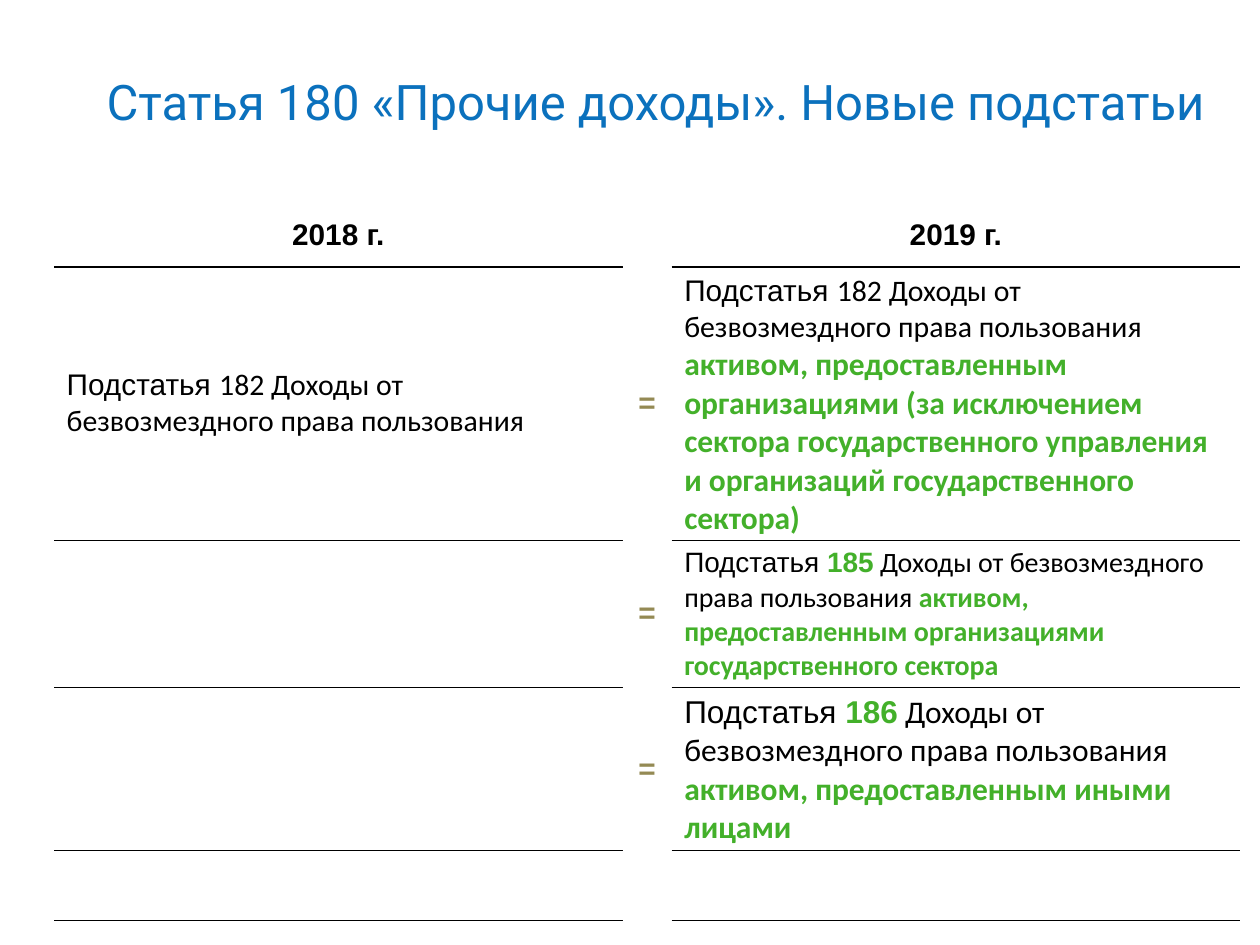
from lxml import etree
from pptx import Presentation
from pptx import util as u
from pptx.dml.color import RGBColor
from pptx.enum import text
from pptx.oxml import ns

BLACK = RGBColor(0x00, 0x00, 0x00)
WHITE = RGBColor(0xFF, 0xFF, 0xFF)
BLUE = RGBColor(0x0B, 0x71, 0xBD)
GREEN = RGBColor(0x43, 0xB0, 0x2A)
OLIVE = RGBColor(0x94, 0x8A, 0x54)

COLUMN_WIDTHS = (11.46, 0.99, 11.46)
ROW_HEIGHTS = (1.27, 5.49, 2.92, 3.28, 1.4)
THIN, THICK = 0.5, 1.5


def run_format(size, name="Arial", color=BLACK, bold=False):
    return {"size": u.Pt(size), "name": name, "color": color, "bold": bold}


def add_runs(paragraph, runs):
    for content, values in runs:
        run = paragraph.add_run()
        run.text = content
        for key, value in values.items():
            if key == "color":
                run.font.color.rgb = value
            else:
                setattr(run.font, key, value)


def add_title(slide, content):
    box = slide.shapes.add_textbox(u.Cm(1.9), u.Cm(1.32), u.Cm(24), u.Cm(1.45))
    box.text_frame.word_wrap = True
    add_runs(box.text_frame.paragraphs[0], [(content, run_format(28, "Roboto", BLUE))])


def set_borders(cell, borders):
    """Draw the sides given as (width, color); the others get no line."""
    properties = cell._tc.get_or_add_tcPr()
    for index, side in enumerate(("lnL", "lnR", "lnT", "lnB")):
        line = etree.Element(ns.qn(f"a:{side}"))
        if side in borders:
            width, color = borders[side]
            line.set("w", str(u.Pt(width)))
            fill = etree.SubElement(line, ns.qn("a:solidFill"))
            etree.SubElement(fill, ns.qn("a:srgbClr"), val=str(color))
        else:
            etree.SubElement(line, ns.qn("a:noFill"))
        properties.insert(index, line)


def cell_borders(row, column):
    color = WHITE if column == 1 else BLACK
    header_width = THIN if column == 1 else THICK
    borders = {"lnB": (header_width if row == 0 else THIN, color)}
    if row > 0:
        borders["lnT"] = (header_width if row == 1 else THIN, color)
    return borders


def fill_cell(cell, runs, centered):
    cell.fill.background()
    cell.vertical_anchor = text.MSO_ANCHOR.MIDDLE
    paragraph = cell.text_frame.paragraphs[0]
    if centered:
        paragraph.alignment = text.PP_ALIGN.CENTER
    add_runs(paragraph, runs)


def add_comparison_table(slide, rows):
    frame = slide.shapes.add_table(
        len(ROW_HEIGHTS), len(COLUMN_WIDTHS), u.Cm(1.09), u.Cm(4.11),
        u.Cm(sum(COLUMN_WIDTHS)), u.Cm(sum(ROW_HEIGHTS)))
    table = frame.table
    table.first_row = table.horz_banding = False
    for column, width in zip(table.columns, COLUMN_WIDTHS):
        column.width = u.Cm(width)
    for row, height in zip(table.rows, ROW_HEIGHTS):
        row.height = u.Cm(height)
    for row, contents in enumerate(rows):
        for column, runs in enumerate(contents):
            cell = table.cell(row, column)
            fill_cell(cell, runs, centered=row == 0 or column == 1)
            set_borders(cell, cell_borders(row, column))


def new_item(number, size, ending):
    """Runs of a new sub-item, with the new wording in green."""
    return [
        ("Подстатья ", run_format(size)),
        (number, run_format(size, color=GREEN, bold=True)),
        (" Доходы от безвозмездного права пользования ", run_format(size, "Calibri")),
        (ending, run_format(size, "Calibri", GREEN, True)),
    ]


def main():
    presentation = Presentation()
    presentation.slide_width, presentation.slide_height = u.Cm(25.4), u.Cm(19.05)
    slide = presentation.slides.add_slide(presentation.slide_layouts[6])

    # Title
    add_title(slide, "Статья 180 «Прочие доходы». Новые подстатьи")

    # Comparison of the two years
    heading = run_format(17, bold=True)
    equals = [("=", run_format(17, color=OLIVE, bold=True))]
    old_item = [
        ("Подстатья ", run_format(17)),
        ("182 Доходы от безвозмездного права пользования", run_format(17, "Calibri")),
    ]
    extended_item = old_item + [
        (" ", run_format(17, "Calibri")),
        ("активом, предоставленным организациями (за исключением сектора "
         "государственного управления и организаций государственного сектора)",
         run_format(18, "Calibri", GREEN, True)),
    ]
    add_comparison_table(slide, [
        ([("2018 г.", heading)], [], [("2019 г.", heading)]),
        (old_item, equals, extended_item),
        ([], equals, new_item(
            "185", 16, "активом, предоставленным организациями государственного сектора")),
        ([], equals, new_item("186", 18, "активом, предоставленным иными лицами")),
        ([], [], []),
    ])

    presentation.save("out.pptx")


if __name__ == "__main__":
    main()
